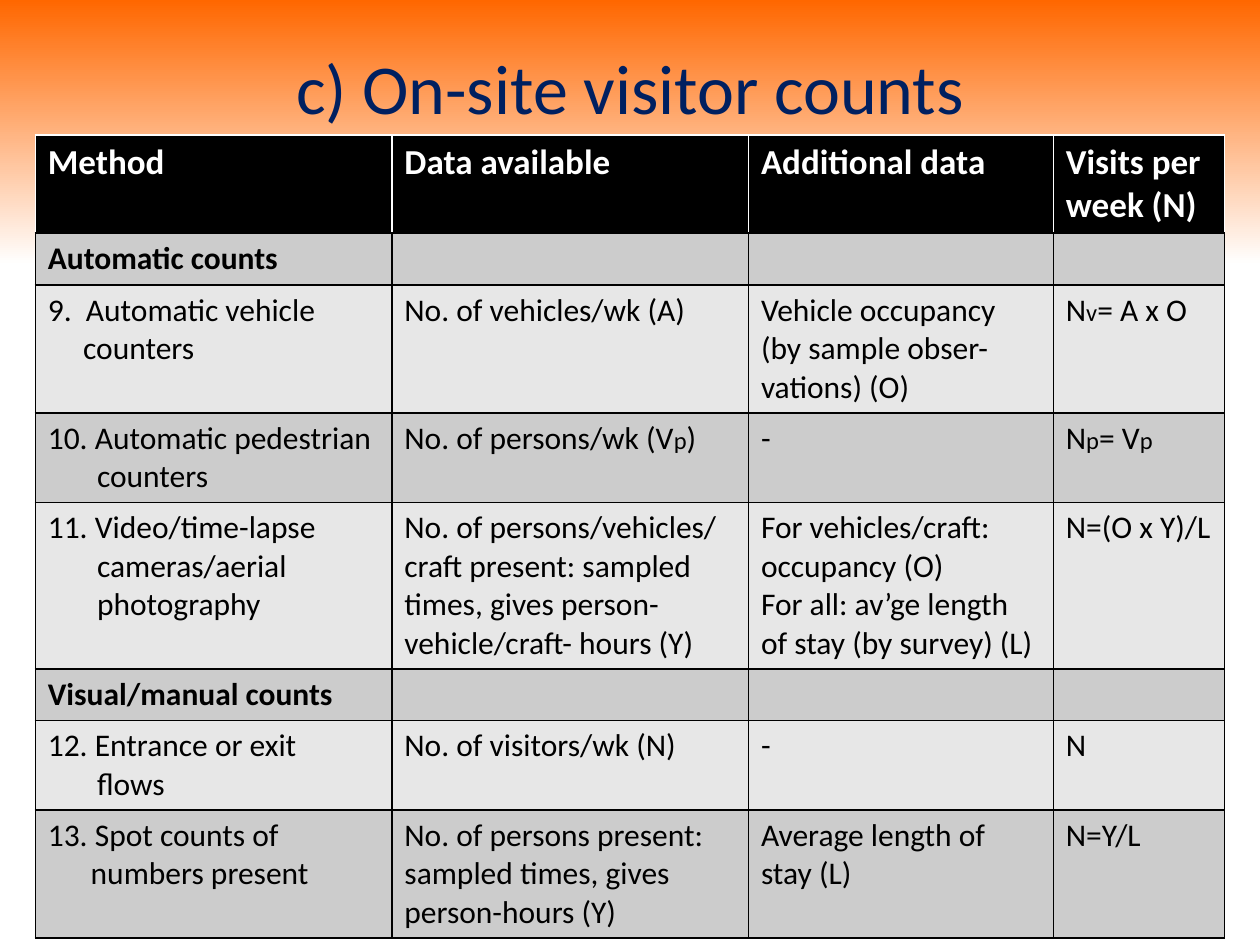
from lxml import etree
from pptx import Presentation
from pptx import util as u
from pptx.dml.color import RGBColor
from pptx.enum import text
from pptx.oxml.ns import qn

FONT = "Calibri"


def rgb(code):
    return RGBColor.from_string(code)


def edge(cell, side, code):
    """Draw a one-point border on side L, R, T or B of a cell."""
    line = etree.SubElement(cell._tc.get_or_add_tcPr(), qn("a:ln" + side), w=str(u.Pt(1)))
    fill = etree.SubElement(line, qn("a:solidFill"))
    etree.SubElement(fill, qn("a:srgbClr"), val=code)


# Each row: height, indent of the later lines in the first column, cell texts.
# A newline starts a paragraph; text between underscores is set small.
rows = [
    (0.78, 0, ["Method", "Data available", "Additional data", "Visits per week (N)"]),
    (0.41, 0, ["Automatic counts", "", "", ""]),
    (1.01, 0.28, ["9.  Automatic vehicle\ncounters", "No. of vehicles/wk (A)",
                  "Vehicle occupancy (by sample obser-\nvations) (O)", "N_v_= A x O"]),
    (0.71, 0.39, ["10. Automatic pedestrian\ncounters", "No. of persons/wk (V_p_)",
                  "-", "N_p_= V_p_"]),
    (1.32, 0.39, ["11. Video/time-lapse\ncameras/aerial\nphotography",
                  "No. of persons/vehicles/ craft present: sampled times, "
                  "gives person-vehicle/craft- hours (Y)",
                  "For vehicles/craft: occupancy (O)\n"
                  "For all: av’ge length of stay (by survey) (L)", "N=(O x Y)/L"]),
    (0.41, 0, ["Visual/manual counts", "", "", ""]),
    (0.71, 0.39, ["12. Entrance or exit\nflows", "No. of visitors/wk (N)", "-", "N"]),
    (1.01, 0.34, ["13. Spot counts of\nnumbers present",
                  "No. of persons present: sampled times, gives person-hours (Y)",
                  "Average length of stay (L)", "N=Y/L"]),
]
widths = [2.83, 2.83, 2.42, 1.36]
heads = (0, 1, 5)

deck = Presentation()
deck.slide_width, deck.slide_height = u.Inches(10), u.Inches(7.5)
slide = deck.slides.add_slide(deck.slide_layouts[5])

back = slide.background.fill
back.gradient()
back.gradient_angle = 270
for stop, (place, code) in zip(back.gradient_stops, [(0, "FF6700"), (0.28, "FFFFFF")]):
    stop.position = place
    stop.color.rgb = rgb(code)

title = slide.shapes.title
title.left, title.top = u.Inches(0.5), u.Inches(0.3)
title.width, title.height = u.Inches(9), u.Inches(0.77)
title.text_frame.vertical_anchor = text.MSO_ANCHOR.MIDDLE
para = title.text_frame.paragraphs[0]
para.alignment = text.PP_ALIGN.CENTER
run = para.add_run()
run.text = "c) On-site visitor counts"
run.font.name, run.font.size = FONT, u.Pt(40)
run.font.color.rgb = rgb("002060")

table = slide.shapes.add_table(
    len(rows), len(widths), u.Inches(0.28), u.Inches(1.07),
    u.Inches(sum(widths)), u.Inches(sum(row[0] for row in rows))).table
for col, width in zip(table.columns, widths):
    col.width = u.Inches(width)

for r, (height, indent, words) in enumerate(rows):
    table.rows[r].height = u.Inches(height)
    for c, entry in enumerate(words):
        cell = table.cell(r, c)
        for side in "LRTB":
            edge(cell, side, "FFFFFF" if r == 0 and side != "B" else "000000")
        cell.fill.solid()
        cell.fill.fore_color.rgb = rgb("000000" if r == 0 else ("E7E7E7", "CCCCCC")[r % 2])
        frame = cell.text_frame
        for n, line in enumerate(entry.split("\n")):
            para = frame.add_paragraph() if n else frame.paragraphs[0]
            para.font.size = u.Pt(18)
            if n and c == 0:
                para._p.get_or_add_pPr().set("marL", str(u.Inches(indent)))
            for k, part in enumerate(line.split("_")):
                if not part:
                    continue
                run = para.add_run()
                run.text = part
                run.font.name = FONT
                run.font.size = u.Pt(20 if r == 0 else 14 if k % 2 else 18)
                run.font.bold = r in heads
                run.font.color.rgb = rgb("000000" if r else "FFFFFF")

# The row tint alternates except that both group headings are the darker one.
deck.save("out.pptx")
